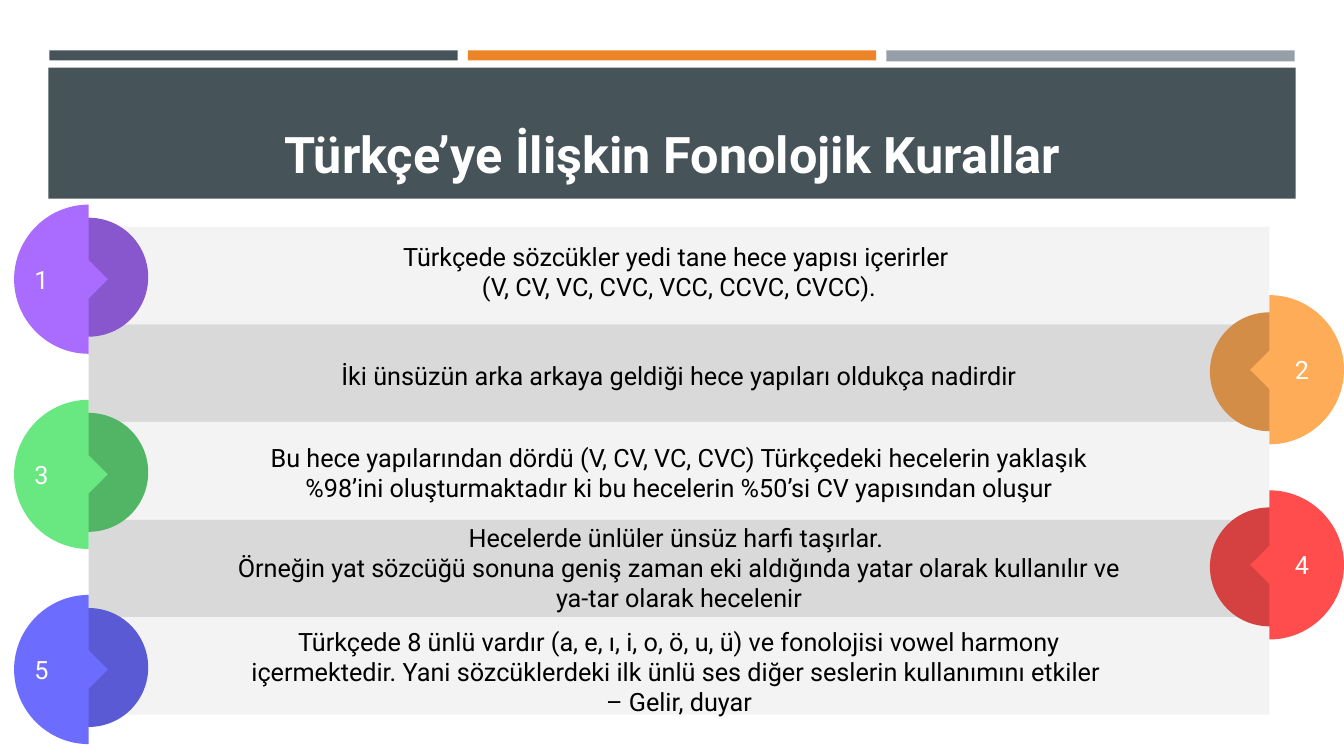
from pptx import Presentation
from pptx.dml.color import RGBColor
from pptx.enum.shapes import MSO_SHAPE as SHAPE
from pptx.enum.text import MSO_ANCHOR as ANCHOR, PP_ALIGN as ALIGN
from pptx.oxml.ns import qn
from pptx.util import Inches, Pt
from lxml.etree import SubElement

TITLE = "Türkçe’ye İlişkin Fonolojik Kurallar"
HEADER = [
    ("465359", 0.49, 0.5, 4.05, 0.1),
    ("969FA7", 8.79, 0.5, 4.05, 0.11),
    ("ED8428", 4.64, 0.5, 4.05, 0.1),
    ("465359", 0.48, 0.67, 12.37, 1.3),
]
RULES = [
    (["Türkçede sözcükler yedi tane hece yapısı içerirler ",
      "(V, CV, VC, CVC, VCC, CCVC, CVCC)."], 2.69, "AA6CFF", "8856CD"),
    (["İki ünsüzün arka arkaya geldiği hece yapıları oldukça nadirdir"],
     3.72, "FFAC59", "D48D47"),
    (["Bu hece yapılarından dördü (V, CV, VC, CVC) Türkçedeki hecelerin yaklaşık "
      "%98’ini oluşturmaktadır ki bu hecelerin %50’si CV yapısından oluşur"],
     4.69, "69E781", "52B565"),
    (["Hecelerde ünlüler ünsüz harfi taşırlar. ",
      "Örneğin yat sözcüğü sonuna geniş zaman eki aldığında yatar olarak "
      "kullanılır ve ya-tar olarak hecelenir"], 5.63, "FF4D4E", "D54041"),
    (["Türkçede 8 ünlü vardır (a, e, ı, i, o, ö, u, ü) ve fonolojisi vowel harmony "
      "içermektedir. Yani sözcüklerdeki ilk ünlü ses diğer seslerin kullanımını etkiler ",
      "– Gelir, duyar"], 6.66, "6C6CFF", "5A5AD5"),
]
BAND_FILLS = ["F3F3F3", "D9D9D9"]
BAND_LEFT, BAND_RIGHT, BANDS_TOP, BANDS_BOTTOM = 0.88, 12.59, 2.25, 7.09
BAND_HEIGHT = (BANDS_BOTTOM - BANDS_TOP) / len(RULES)
RULE_LEFT, RULE_WIDTH, RULE_HEIGHT = 2.18, 9.11, 0.88
HALF_RADIUS, DISC_RADIUS, TIP, ARC_PULL = 0.74, 0.59, 0.19, 0.55
SIDES = [
    dict(edge=BAND_LEFT, inward=1, half_drop=0.52, disc_drop=0.5,
         align=ALIGN.LEFT, insets=(0.2, 0.1, 0.1, 0.1)),
    dict(edge=BAND_RIGHT, inward=-1, half_drop=0.45, disc_drop=0.47,
         align=ALIGN.CENTER, insets=(0.1, 0.1, 0, 0.1)),
]

prs = Presentation()
prs.slide_width, prs.slide_height = Inches(13.33), Inches(7.5)
shapes = prs.slides.add_slide(prs.slide_layouts[6]).shapes


def color(value):
    return RGBColor.from_string(value)


def paint(shape, fill):
    shape.shadow.inherit = False
    shape.fill.solid()
    shape.fill.fore_color.rgb = color(fill)
    shape.line.fill.background()
    return shape


def add_shape(kind, fill, *box):
    return paint(shapes.add_shape(kind, *map(Inches, box)), fill)


def write(shape, lines, align=ALIGN.CENTER, anchor=ANCHOR.MIDDLE,
          insets=(0.1, 0.05, 0.1, 0.05), size=18, ink="000000", bold=False):
    frame = shape.text_frame
    left, top, right, bottom = map(Inches, insets)
    layout = dict(word_wrap=True, vertical_anchor=anchor, margin_left=left,
                  margin_top=top, margin_right=right, margin_bottom=bottom)
    for key, value in layout.items():
        setattr(frame, key, value)
    frame.text = "\n".join(lines)
    for paragraph in frame.paragraphs:
        paragraph.alignment = align
        for key, value in dict(name="Roboto", size=Pt(size), bold=bold).items():
            setattr(paragraph.font, key, value)
        paragraph.font.color.rgb = color(ink)


def toward(start, end):
    return round(start + (end - start) * ARC_PULL)


def round_corners(half):
    steps = list(half.element.iter(qn("a:moveTo"), qn("a:lnTo")))[:3]
    corners = [tuple(int(step[0].get(axis)) for axis in "xy") for step in steps]
    (top_x, top_y), (outer_x, outer_y), (bottom_x, bottom_y) = corners
    curves = [
        [(toward(top_x, outer_x), top_y), (outer_x, toward(outer_y, top_y)), corners[1]],
        [(outer_x, toward(outer_y, bottom_y)), (toward(bottom_x, outer_x), bottom_y),
         corners[2]],
    ]
    for step, curve in zip(steps[1:], curves):
        arc = SubElement(step.getparent(), qn("a:cubicBezTo"))
        for x, y in curve:
            SubElement(arc, qn("a:pt"), x=str(x), y=str(y))
        step.getparent().replace(step, arc)


def add_half_disc(edge, middle, inward, fill):
    outline = [(edge, middle - HALF_RADIUS), (edge - inward * HALF_RADIUS, middle),
               (edge, middle + HALF_RADIUS), (edge, middle + TIP),
               (edge + inward * TIP, middle), (edge, middle - TIP)]
    points = [(Inches(x), Inches(y)) for x, y in outline]
    builder = shapes.build_freeform(*points[0])
    builder.add_line_segments(points[1:], close=True)
    half = paint(builder.convert_to_shape(), fill)
    round_corners(half)
    return half


for fill, *box in HEADER:
    add_shape(SHAPE.RECTANGLE, fill, *box)
title = shapes.add_textbox(*map(Inches, (0.64, 0.77, 12.06, 1.1)))
write(title, [TITLE], anchor=ANCHOR.BOTTOM, size=36, ink="FFFFFF", bold=True)

band_tops = [BANDS_TOP + row * BAND_HEIGHT for row in range(len(RULES))]
for row, top in enumerate(band_tops):
    add_shape(SHAPE.RECTANGLE, BAND_FILLS[row % 2], BAND_LEFT, top,
              BAND_RIGHT - BAND_LEFT, BAND_HEIGHT)

for row, (lines, middle, bright, dark) in enumerate(RULES):
    side, top = SIDES[row % 2], band_tops[row]
    add_shape(SHAPE.OVAL, dark, side["edge"] - DISC_RADIUS,
              top + side["disc_drop"] - DISC_RADIUS, 2 * DISC_RADIUS, 2 * DISC_RADIUS)
    number = add_half_disc(side["edge"], top + side["half_drop"], side["inward"], bright)
    write(number, [str(row + 1)], align=side["align"], insets=side["insets"], ink="FFFFFF")
    rule = shapes.add_textbox(*map(Inches, (RULE_LEFT, middle - RULE_HEIGHT / 2,
                                            RULE_WIDTH, RULE_HEIGHT)))
    write(rule, lines)

prs.save("out.pptx")
